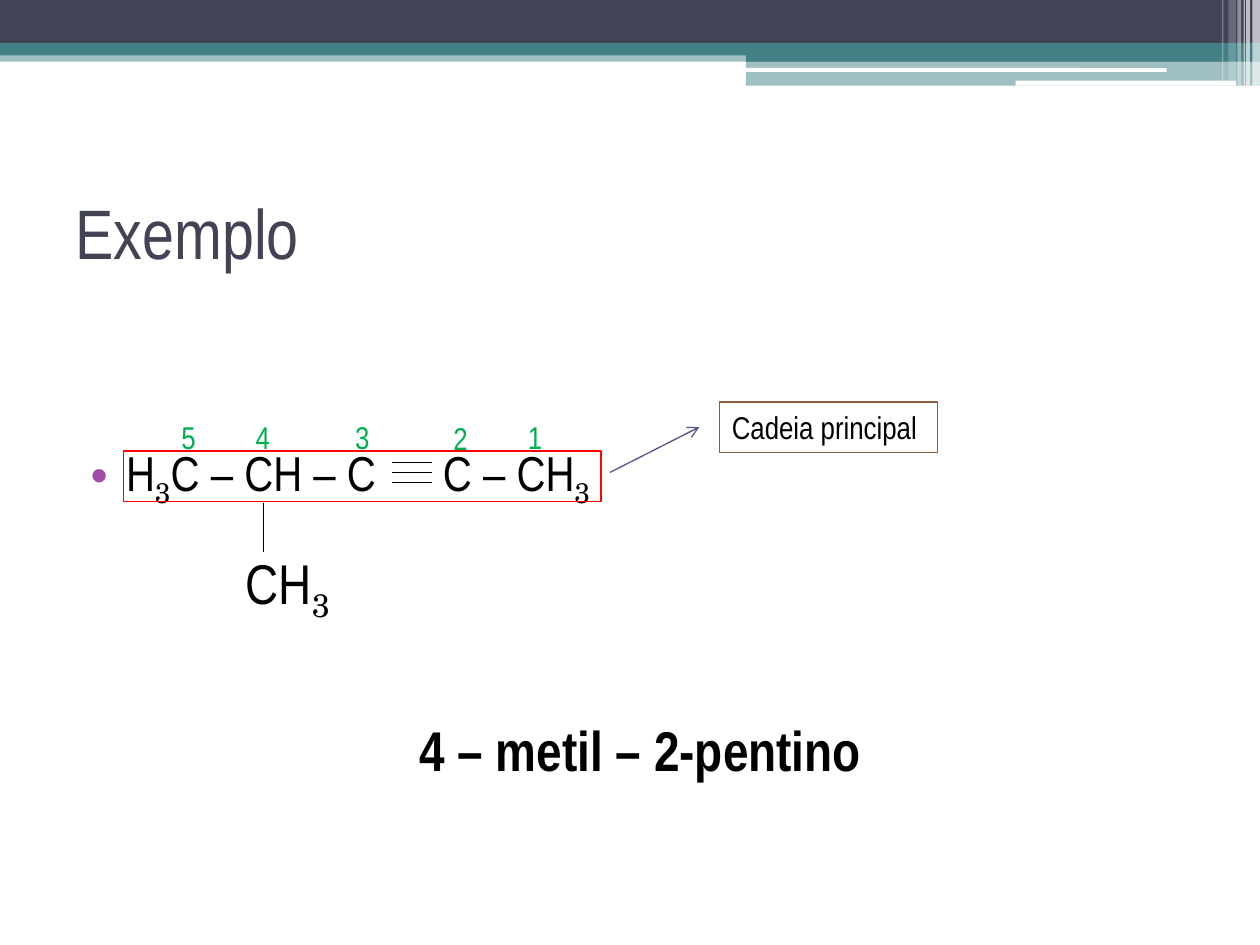
from lxml.etree import SubElement
from pptx import Presentation
from pptx.dml.color import RGBColor
from pptx.enum.shapes import MSO_CONNECTOR as Link, MSO_SHAPE as Kind
from pptx.enum.text import MSO_ANCHOR as Anchor, MSO_AUTO_SIZE as Fit, PP_ALIGN as Align
from pptx.oxml.ns import qn
from pptx.util import Inches, Pt

SANS, SERIF = "Arial Narrow", "TeX Gyre Schola"
INK, TEAL, WHITE, BLACK, GREEN = "424456", "438086", "FFFFFF", "000000", "00B050"

# Header: left, top, width, height, colour, opacity in percent
BANDS = [
    (0, 0.4, 10, 0.09, TEAL, 50),
    (0, 0, 10, 0.34, INK, 100),
    (0, 0.34, 10, 0.1, TEAL, 100),
    (5.92, 0.39, 4.08, 0.1, TEAL, 100),
    (5.92, 0.48, 4.08, 0.2, TEAL, 50),
]
PILLS = [(5.91, 0.54, 3.35, 0.03, WHITE, 100), (8.06, 0.64, 1.75, 0.04, WHITE, 100)]
# Stripes: left, width, height, opacity
STRIPES = [
    (9.94, 0.06, 0.68, 65), (9.89, 0.03, 0.68, 65), (9.87, 0.01, 0.68, 60),
    (9.82, 0.03, 0.68, 40), (9.75, 0.06, 0.64, 20), (9.7, 0.01, 0.64, 30),
]

# Formula parts: text, subscript, extra letter spacing in points
CHAIN = [("H", False, 0), ("3", True, 0), ("C – CH – C", False, 0),
         (" ", False, 32), ("C – CH", False, 0), ("3", True, 0)]
BRANCH = [("CH", False, 0), ("3", True, 0)]
# Carbon numbers: text, left, top
CARBONS = [("1", 4.09, 3.27), ("2", 3.5, 3.28), ("3", 2.72, 3.27),
           ("4", 1.93, 3.27), ("5", 1.34, 3.27)]


def paint(fmt, hue):
    if hasattr(fmt, "solid"):
        fmt.solid()
        fmt = fmt.fore_color
    fmt.rgb = RGBColor.from_string(hue)


def style(run, size, hue=BLACK, face=SANS, bold=False):
    run.font.size, run.font.name, run.font.bold = Pt(size), face, bold
    paint(run.font.color, hue)


def place(shape, *box):
    shape.left, shape.top, shape.width, shape.height = map(Inches, box)


def block(kind, x, y, w, h, fill=None, alpha=100, edge=None):
    shape = slide.shapes.add_shape(kind, *map(Inches, (x, y, w, h)))
    shape.shadow.inherit = False
    if fill:
        paint(shape.fill, fill)
        if alpha < 100:
            tint = shape.fill._xPr.find(".//" + qn("a:srgbClr"))
            SubElement(tint, qn("a:alpha"), val=str(alpha * 1000))
    else:
        shape.fill.background()
    if edge:
        paint(shape.line.fill, edge)
        shape.line.width = Pt(0.75)
    else:
        shape.line.fill.background()
    return shape


def label(text, size, x, y, w, h, hue=GREEN, bold=False):
    box = slide.shapes.add_textbox(*map(Inches, (x, y, w, h)))
    box.text_frame.word_wrap = True
    box.text_frame.text = text
    for run in box.text_frame.paragraphs[0].runs:
        style(run, size, hue, bold=bold)
    return box


def formula(para, parts, size):
    for text, low, gap in parts:
        run = para.add_run()
        run.text = text
        style(run, size, face=SERIF if low else SANS)
        props = run.font._element
        if low:
            props.set("baseline", "-25000")
        if gap:
            props.set("spc", str(gap * 100))


def bond(x1, y1, x2, y2, hue=BLACK, arrow=False):
    line = slide.shapes.add_connector(Link.STRAIGHT, *map(Inches, (x1, y1, x2, y2)))
    paint(line.line.fill, hue)
    line.line.width = Pt(0.75)
    if arrow:
        SubElement(line.line._get_or_add_ln(), qn("a:tailEnd"), type="arrow")
    SubElement(line._element.spPr, qn("a:effectLst"))


deck = Presentation()
deck.slide_width, deck.slide_height = Inches(10), Inches(7.5)
slide = deck.slides.add_slide(deck.slide_layouts[1])

# Header
for band in BANDS:
    block(Kind.RECTANGLE, *band)
for pill in PILLS:
    block(Kind.ROUNDED_RECTANGLE, *pill)
for x, w, h, alpha in STRIPES:
    block(Kind.RECTANGLE, x, 0, w, h, WHITE, alpha)

# Title
title = slide.shapes.title
place(title, 0.5, 1.25, 9, 1.17)
frame = title.text_frame
frame.text = "Exemplo"
frame.vertical_anchor, frame.auto_size = Anchor.MIDDLE, Fit.NONE
frame.paragraphs[0].alignment = Align.LEFT
style(frame.paragraphs[0].runs[0], 40, INK)

# Main chain as a bulleted line
body = slide.placeholders[1]
place(body, 0.5, 2.46, 9, 4.73)
frame = body.text_frame
frame.auto_size, frame.margin_top = Fit.NONE, Inches(1.05)
para = frame.paragraphs[0]
para.space_before = Pt(3)
formula(para, CHAIN, 28)
props = para._p.get_or_add_pPr()
props.set("marL", str(Inches(0.4)))
props.set("indent", str(-Inches(0.28)))
SubElement(SubElement(props, qn("a:buClr")), qn("a:srgbClr"), val="A04DA3")
SubElement(props, qn("a:buFont"), typeface="Arial")
SubElement(props, qn("a:buChar"), char="•")

# Triple bond, then the bond to the branch
for step in range(3):
    y = 3.67 + 0.08 * step
    bond(3.11, y, 3.43, y)
bond(2.09, 3.99, 2.09, 4.38)
branch = label("", 32, 1.85, 4.3, 1.02, 1.18)
formula(branch.text_frame.paragraphs[0], BRANCH, 32)

# Frame round the main chain, with its callout
block(Kind.RECTANGLE, 0.98, 3.58, 3.79, 0.4, edge="FF0000")
bond(4.84, 3.75, 5.55, 3.39, "53548A", arrow=True)
note = label("Cadeia principal", 18, 5.71, 3.19, 1.73, 0.4, BLACK)
paint(note.line.fill, "8B5D3D")
note.line.width = Pt(0.75)

# Carbon numbers and the name of the compound
for text, x, y in CARBONS:
    label(text, 18, x, y, 0.35, 0.4)
label("4 – metil – 2-pentino", 32, 3.23, 5.63, 3.74, 0.64, BLACK, bold=True)

deck.save("out.pptx")
